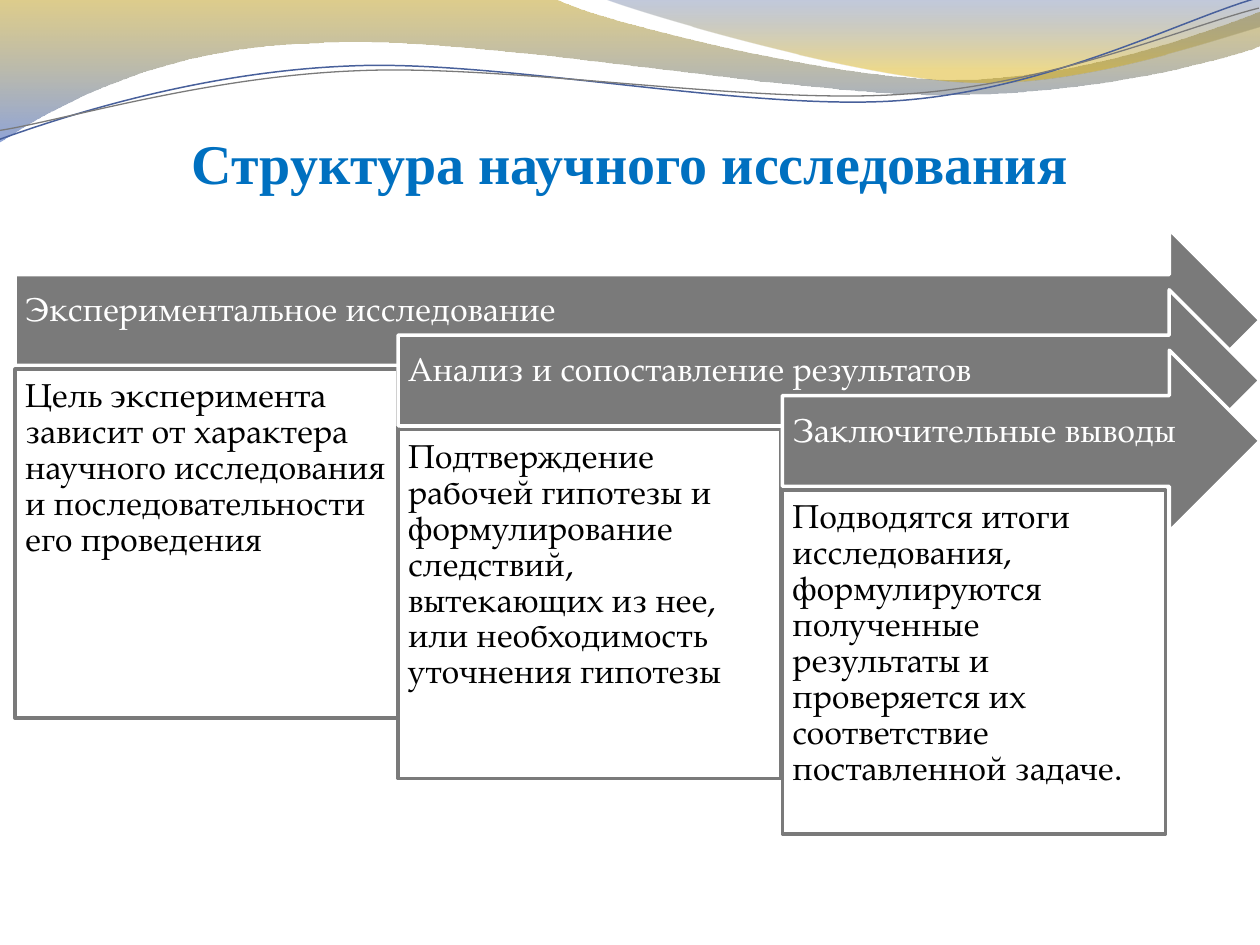
import pptx
import pptx.util
import pptx.dml.color
import pptx.enum.shapes
import pptx.enum.text
import pptx.oxml.ns
import lxml.etree

Inches = pptx.util.Inches
Pt = pptx.util.Pt
RGB = pptx.dml.color.RGBColor
KIND = pptx.enum.shapes.MSO_SHAPE
ANCHOR = pptx.enum.text.MSO_ANCHOR
ALIGN = pptx.enum.text.PP_ALIGN
qn = pptx.oxml.ns.qn

WHITE = RGB(0xFF, 0xFF, 0xFF)
BLACK = RGB(0, 0, 0)
GREY = RGB(0x7A, 0x7A, 0x7A)
TITLE = RGB(0, 0x70, 0xC0)
INK = RGB(0x48, 0x60, 0x9B)
OCHRE = RGB(0xB6, 0x90, 0x00)
GOLD = RGB(0xD9, 0xAC, 0x00)
BLUE = RGB(0x33, 0x59, 0xB7)
NAVY = RGB(0x32, 0x4C, 0x8D)

deck = pptx.Presentation()
deck.slide_width, deck.slide_height = Inches(10), Inches(7.5)
slide = deck.slides.add_slide(deck.slide_layouts[6])


def trace(start, parts, closed):
    dots = [dot for part in parts for dot in zip(part[::2], part[1::2])]
    pen = slide.shapes.build_freeform(Inches(start[0]), Inches(start[1]))
    pen.add_line_segments([(Inches(x), Inches(y)) for x, y in dots], close=closed)
    shape = pen.convert_to_shape()
    shape.shadow.inherit = False
    lines = iter(list(shape.element.iter(qn("a:lnTo"))))
    for part in parts:
        group = [next(lines) for pair in part[::2]]
        if len(group) == 3:
            bend = lxml.etree.Element(qn("a:cubicBezTo"))
            group[0].addprevious(bend)
            for line in group:
                bend.append(line[0])
                line.getparent().remove(line)
    return shape


def write(shape, words, look, frame):
    box = shape.text_frame
    box.word_wrap = True
    for name, value in frame.items():
        setattr(box, name, value)
    para = box.paragraphs[0]
    para.alignment = look["align"]
    para.line_spacing = look["space"]
    run = para.add_run()
    run.text = words
    for name, value in look["font"].items():
        setattr(run.font, name, value)
    run.font.color.rgb = look["color"]


waves = [
    ((0, 0), [(4.4, -0.01), (4.76, 0.17, 6.64, 0.63, 7.58, 0.63),
              (8.53, 0.63, 9.58, 0.26, 10, 0.09), (10.01, 0.36),
              (9.83, 0.44, 8.7, 0.76, 7.46, 0.75), (6.22, 0.75, 3.82, 0.28, 2.57, 0.34),
              (1.29, 0.36, 0.46, 0.83, -0.01, 1.13), (0, 0)],
     [(0, OCHRE, 45), (1, BLUE, 55)]),
    ((4.79, -0.01), [(5.09, 0.11, 6.82, 0.62, 7.69, 0.65),
                     (8.56, 0.69, 9.61, 0.32, 10, 0.21), (10, 0), (4.79, -0.01)],
     [(0, NAVY, 30), (0.8, GOLD, 45)]),
]
for start, parts, stops in waves:
    wave = trace(start, parts, True)
    wave.line.fill.background()
    wave.fill.gradient()
    wave.fill.gradient_angle = 270
    for stop, (place, color, alpha) in zip(wave.fill.gradient_stops, stops):
        stop.position = place
        stop.color.rgb = color
    tones = wave.element.spPr.iter(qn("a:srgbClr"))
    for tone, (place, color, alpha) in zip(tones, stops):
        lxml.etree.SubElement(tone, qn("a:alpha")).set("val", str(alpha * 1000))

curves = [
    ((-0.02, 0.87), [(0.47, 0.72, 1.58, 0.41, 2.78, 0.42), (3.96, 0.42, 5.91, 0.93, 7.12, 0.9),
                     (8.32, 0.87, 9.4, 0.36, 10, 0.22)], INK, 0.85),
    ((-0.02, 0.8), [(0.46, 0.75, 1.64, 0.45, 2.83, 0.46), (4.03, 0.46, 5.96, 0.88, 7.16, 0.85),
                    (8.35, 0.83, 9.42, 0.42, 10.01, 0.3)], GREY, 0.75),
]
for start, parts, color, width in curves:
    curve = trace(start, parts, False)
    curve.rotation = 357.3
    curve.fill.background()
    curve.line.color.rgb = color
    curve.line.width = Pt(width)

head = slide.shapes.add_textbox(Inches(0.5), Inches(0.77), Inches(9), Inches(0.78))
write(head, "Структура научного исследования",
      {"align": ALIGN.CENTER, "space": 1, "color": TITLE,
       "font": {"name": "Times New Roman", "size": Pt(32), "bold": True}},
      {"vertical_anchor": ANCHOR.BOTTOM, "margin_left": 0, "margin_right": 0,
       "margin_top": Inches(0.05), "margin_bottom": 0})

body = {"align": ALIGN.LEFT, "space": 0.9, "color": BLACK,
        "font": {"name": "TeX Gyre Pagella", "size": Pt(19)}}
label = {**body, "color": WHITE}
pad = Inches(0.08)
inner = {"vertical_anchor": ANCHOR.TOP, "margin_left": pad, "margin_right": pad,
         "margin_top": pad, "margin_bottom": pad}
outer = {**inner, "vertical_anchor": ANCHOR.MIDDLE,
         "margin_right": Inches(0.28), "margin_bottom": Inches(0.23)}

stages = [
    ("Экспериментальное исследование", 0.12, 2.77,
     "Цель эксперимента зависит от характера научного исследования "
     "и последовательности его проведения"),
    ("Анализ и сопоставление результатов", 3.16, 2.77,
     "Подтверждение рабочей гипотезы и формулирование следствий, "
     "вытекающих из нее, или необходимость уточнения гипотезы"),
    ("Заключительные выводы", 6.21, 2.73,
     "Подводятся итоги исследования, формулируются полученные результаты "
     "и проверяется их соответствие поставленной задаче."),
]
for i, (name, left, tall, words) in enumerate(stages):
    top = 1.82 + 0.48 * i
    pair = [
        (KIND.RIGHT_ARROW, top, 10 - left, 1.44, GREY, WHITE, name, label, outer),
        (KIND.RECTANGLE, top + 1.11, 3.04, tall, WHITE, GREY, words, body, inner),
    ]
    for kind, y, wide, high, fill, edge, text, look, frame in pair:
        shape = slide.shapes.add_shape(kind, Inches(left), Inches(y), Inches(wide), Inches(high))
        shape.shadow.inherit = False
        shape.fill.solid()
        shape.fill.fore_color.rgb = fill
        shape.line.color.rgb = edge
        shape.line.width = Pt(2)
        write(shape, text, look, frame)

deck.save("out.pptx")
